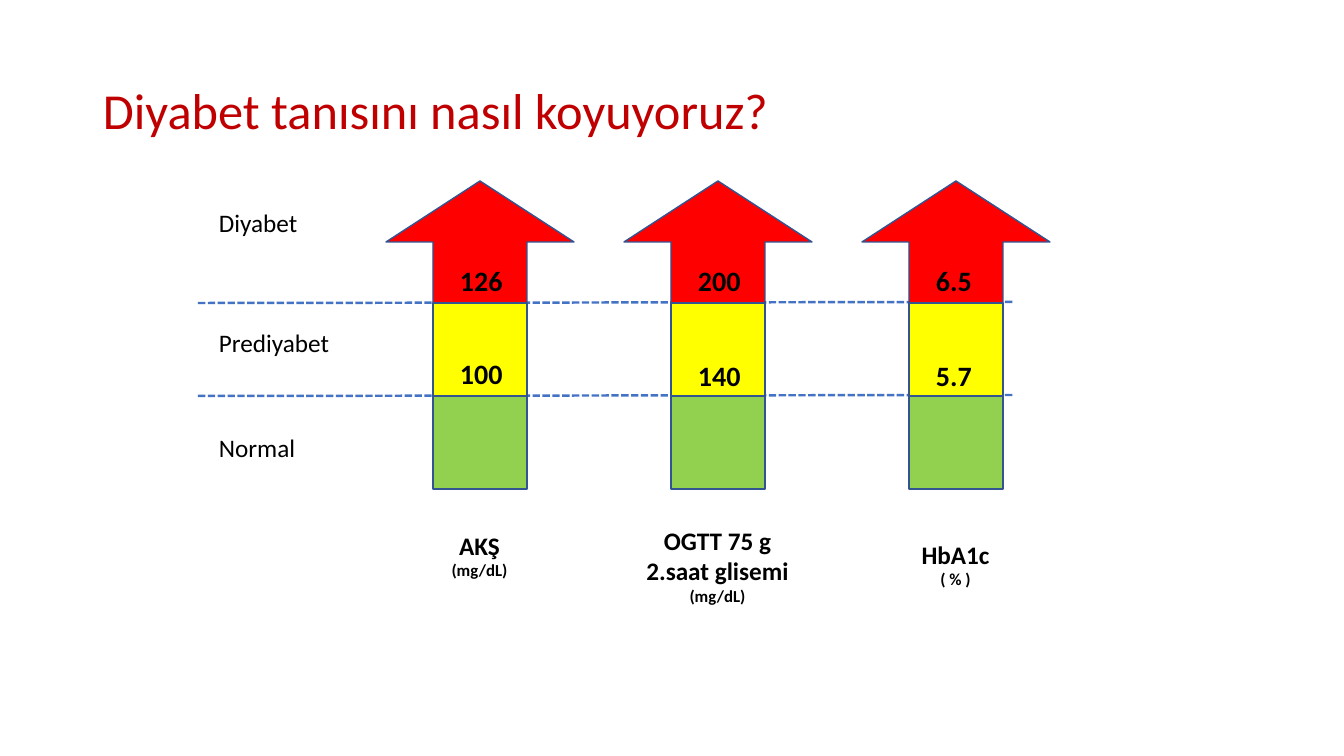
from lxml.etree import SubElement
from pptx import Presentation
from pptx.dml.color import RGBColor
from pptx.enum.dml import MSO_LINE
from pptx.enum.shapes import MSO_CONNECTOR, MSO_SHAPE
from pptx.enum.text import MSO_ANCHOR, MSO_AUTO_SIZE, PP_ALIGN
from pptx.oxml.ns import qn
from pptx.util import Pt

EMU_PER_PX = 12192000 / 1344
COLORS = {
    "title": "C00000",
    "text": "000000",
    "diabetes": "FF0000",
    "prediabetes": "FFFF00",
    "normal": "92D050",
    "outline": "325491",
    "threshold": "4472C4",
}


def px(*lengths):
    return [round(length * EMU_PER_PX) for length in lengths]


def color(name):
    return RGBColor.from_string(COLORS[name])


class SlideBuilder:
    font = "Calibri"

    def __init__(self, slide):
        self.slide = slide

    def text(self, box, lines, tint="text", bold=False, align=PP_ALIGN.LEFT,
             wrap=False, spacing=None):
        """Add a text box; lines holds (wording, point size) pairs."""
        frame = self.slide.shapes.add_textbox(*px(*box)).text_frame
        frame.word_wrap = wrap
        if wrap:
            frame.vertical_anchor = MSO_ANCHOR.MIDDLE
        else:
            frame.auto_size = MSO_AUTO_SIZE.SHAPE_TO_FIT_TEXT
        for index, (wording, size) in enumerate(lines):
            paragraph = frame.add_paragraph() if index else frame.paragraphs[0]
            paragraph.alignment = align
            paragraph.line_spacing = spacing
            run = paragraph.add_run()
            run.text = wording
            run.font.name = self.font
            run.font.size = Pt(size)
            run.font.bold = bold
            run.font.color.rgb = color(tint)

    def dashed_line(self, start, end):
        line = self.slide.shapes.add_connector(
            MSO_CONNECTOR.STRAIGHT, *px(*start, *end))
        line.line.color.rgb = color("threshold")
        line.line.width = Pt(1.75)
        line.line.dash_style = MSO_LINE.SQUARE_DOT
        SubElement(line._element.spPr, qn("a:effectLst"))

    def group(self, parts):
        """Group outlined shapes given as (preset, box, fill)."""
        shapes = self.slide.shapes.add_group_shape().shapes
        for preset, box, fill in parts:
            shape = shapes.add_shape(preset, *px(*box))
            shape.shadow.inherit = False
            shape.fill.solid()
            shape.fill.fore_color.rgb = color(fill)
            shape.line.color.rgb = color("outline")
            shape.line.width = Pt(1)


def main():
    presentation = Presentation()
    presentation.slide_width, presentation.slide_height = px(1344, 756)
    builder = SlideBuilder(
        presentation.slides.add_slide(presentation.slide_layouts[6]))

    builder.text((93, 40, 1159, 146), [("Diyabet tanısını nasıl koyuyoruz?", 36)],
                 tint="title", wrap=True, spacing=0.9)

    arrow_top, diabetes_limit, band_height = 181, 303, 93
    prediabetes_limit = diabetes_limit + band_height
    for limit in (diabetes_limit, prediabetes_limit):
        builder.dashed_line((198, limit), (1013, limit - 1))

    for stage, top, width in (("Diyabet", 202, 100), ("Prediyabet", 322, 132),
                              ("Normal", 427, 98)):
        builder.text((209, top, width, 40), [(stage, 18)])

    arrow_width, bar_width = 188, 94
    first_center, pitch = 480, 238
    # Upper value, lower value and its top, value width, caption box, caption lines
    tests = [
        ("126", "100", 352, 64, (525, 77, 61), [("AKŞ", 18), ("(mg/dL)", 12)]),
        ("200", "140", 354, 64, (520, 163, 92),
         [("OGTT 75 g", 18), ("2.saat glisemi", 18), ("(mg/dL)", 12)]),
        ("6.5", "5.7", 354, 56, (534, 89, 61), [("HbA1c", 18), ("( % )", 12)]),
    ]
    for index, (upper, lower, lower_top, value_width, caption_box,
                caption) in enumerate(tests):
        center = first_center + index * pitch
        bar_left = center - bar_width // 2
        builder.group([
            (MSO_SHAPE.UP_ARROW, (center - arrow_width // 2, arrow_top, arrow_width,
                                  diabetes_limit - arrow_top), "diabetes"),
            (MSO_SHAPE.RECTANGLE,
             (bar_left, diabetes_limit, bar_width, band_height), "prediabetes"),
            (MSO_SHAPE.RECTANGLE,
             (bar_left, prediabetes_limit, bar_width, band_height), "normal"),
        ])
        for value, top in ((upper, 259), (lower, lower_top)):
            builder.text((center - 30, top, value_width, 44), [(value, 20)], bold=True)
        top, width, height = caption_box
        builder.text((center - width // 2 - 1, top, width, height), caption,
                     bold=True, align=PP_ALIGN.CENTER)

    presentation.save("out.pptx")


if __name__ == "__main__":
    main()
